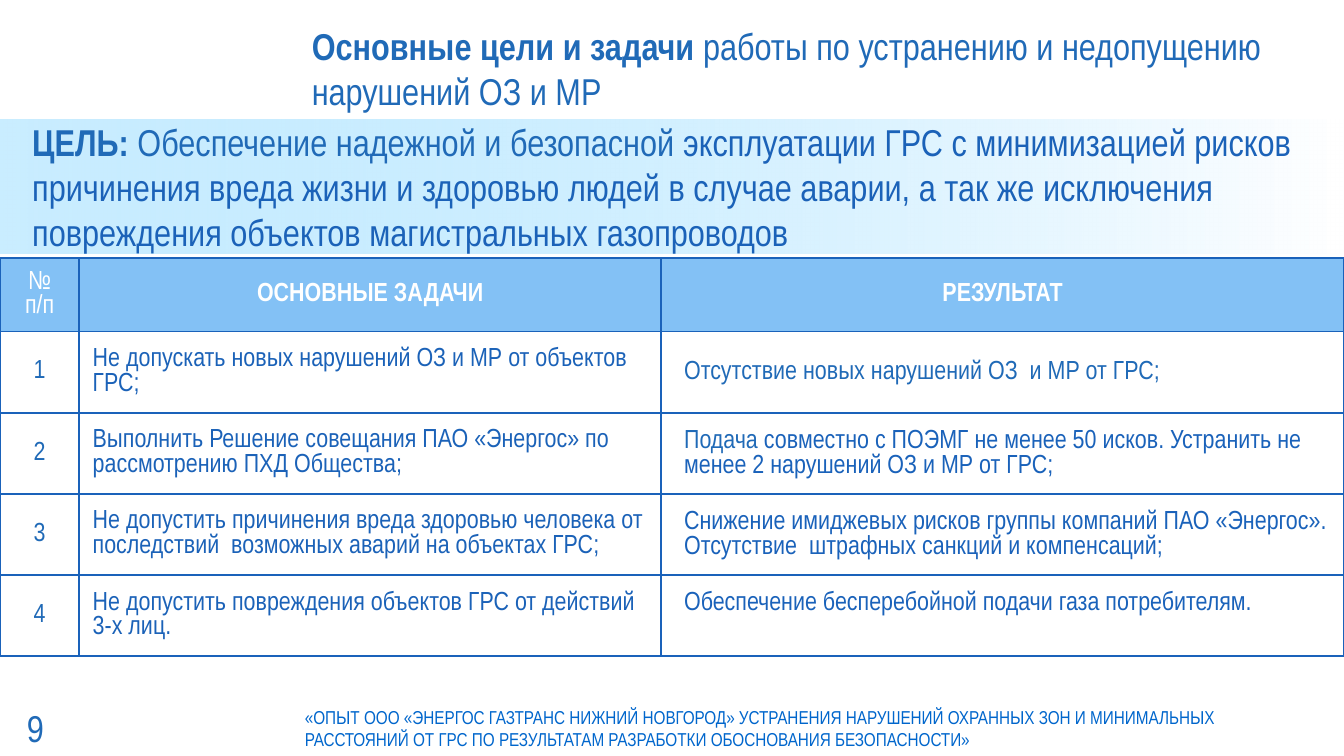
"""Build the slide on goals and tasks for protected-zone violations."""
from dataclasses import dataclass

import pptx
import pptx.util
import pptx.dml.color
import pptx.enum.shapes
import pptx.enum.text
import pptx.oxml
import pptx.oxml.ns
from lxml import etree

W = 10
H = W * 9 / 16
FONT = "Arial Narrow"
COLORS = {
    "main": "206AB7", "text": "1B62B8", "line": "1A62BA", "head": "83C1F5",
    "white": "FFFFFF", "sky": "66CCFF", "footer": "0066CC",
}
COLS = (0.059, 0.433, 0.508)
ROWS = (0.49, 0.604, 0.604, 0.604, 0.604)
WIDE = (0.1, 0.04, 0.1, 0.04)
TIGHT = (0.08, 0.01, 0.08, 0)
RAISED = (0.08, 0.01, 0.08, 0.19)
ALIGN = pptx.enum.text.PP_ALIGN
ANCHOR = pptx.enum.text.MSO_ANCHOR


@dataclass
class Box:
    """Shares of the slide's width and height."""
    x: float
    y: float
    w: float
    h: float

    def emu(self) -> list:
        shares = ((self.x, W), (self.y, H), (self.w, W), (self.h, H))
        return [pptx.util.Inches(a * b) for a, b in shares]


@dataclass
class Run:
    text: str
    color: str = "main"
    bold: bool = False


@dataclass
class Task:
    goal: str
    result: list
    margins: tuple = TIGHT


TASKS = [
    Task("Не допускать новых нарушений ОЗ и МР от объектов ГРС;",
         [Run("Отсутствие новых нарушений ОЗ  и МР от ГРС;")]),
    Task("Выполнить Решение совещания ПАО «Энергос» по рассмотрению ПХД Общества;",
         [Run("Подача"),
          Run(" совместно с ПОЭМГ не менее 50 исков. Устранить не менее 2 нарушений ОЗ и МР от ГРС;", "line")]),
    Task("Не допустить причинения вреда здоровью человека от последствий  возможных аварий на объектах ГРС;",
         [Run("Снижение имиджевых рисков группы компаний ПАО «Энергос». "
              "Отсутствие  штрафных санкций и компенсаций;", "line")]),
    Task("Не допустить повреждения объектов ГРС от действий 3-х лиц.",
         [Run("Обеспечение бесперебойной подачи газа потребителям.", "line")], RAISED),
]


def rgb(name: str) -> pptx.dml.color.RGBColor:
    return pptx.dml.color.RGBColor.from_string(COLORS[name])


def write(tf, runs: list, *, size: float = 20, align=ALIGN.LEFT, indent: float = 0) -> None:
    tf.word_wrap = True
    p = tf.paragraphs[0]
    p.alignment = align
    if indent:
        pPr = p._p.get_or_add_pPr()
        pPr.set("marL", str(pptx.util.Inches(indent)))
        pPr.set("indent", "0")
    for item in runs:
        r = p.add_run()
        r.text = item.text
        r.font.name = FONT
        r.font.size = pptx.util.Pt(size)
        r.font.bold = item.bold
        r.font.color.rgb = rgb(item.color)


def set_margins(frame, margins: tuple) -> None:
    for side, value in zip(("left", "top", "right", "bottom"), margins):
        setattr(frame, f"margin_{side}", pptx.util.Inches(value))


def add_text(s, box: Box, runs: list, *, margins: tuple = (0, 0, 0, 0),
             anchor=ANCHOR.MIDDLE, **fmt) -> None:
    tf = s.shapes.add_textbox(*box.emu()).text_frame
    set_margins(tf, margins)
    tf.vertical_anchor = anchor
    write(tf, runs, **fmt)


def add_goal(s, box: Box, runs: list) -> None:
    sp = s.shapes.add_shape(pptx.enum.shapes.MSO_SHAPE.RECTANGLE, *box.emu())
    sp.shadow.inherit = False
    sp.line.fill.background()
    sp.fill.gradient()
    sp.fill.gradient_angle = 0
    for stop, color, alpha in zip(sp.fill.gradient_stops, ("sky", "white"), (35, 82)):
        stop.color.rgb = rgb(color)
        clr = stop._gs.find(pptx.oxml.ns.qn("a:srgbClr"))
        etree.SubElement(clr, pptx.oxml.ns.qn("a:alpha")).set("val", str(alpha * 1000))
    tf = sp.text_frame
    set_margins(tf, (0, 0, 0, 0))
    tf.vertical_anchor = ANCHOR.MIDDLE
    write(tf, runs, indent=0.24)


def add_cell(cell, runs: list, *, margins: tuple = WIDE, fill: str = "", **fmt) -> None:
    tcPr = cell._tc.get_or_add_tcPr()
    for side in "LRTB":
        tcPr.append(pptx.oxml.parse_xml(
            f'<a:ln{side} {pptx.oxml.ns.nsdecls("a")} w="12700"><a:solidFill>'
            f'<a:srgbClr val="{COLORS["line"]}"/></a:solidFill></a:ln{side}>'))
    if fill:
        cell.fill.solid()
        cell.fill.fore_color.rgb = rgb(fill)
    else:
        cell.fill.background()
    cell.vertical_anchor = ANCHOR.MIDDLE
    set_margins(cell, margins)
    write(cell.text_frame, runs, size=14, **fmt)


def add_tasks(s, box: Box, tasks: list) -> None:
    table = s.shapes.add_table(len(ROWS), len(COLS), *box.emu()).table
    table.first_row = table.horz_banding = False
    for column, share in zip(table.columns, COLS):
        column.width = pptx.util.Inches(share * W)
    for row, height in zip(table.rows, ROWS):
        row.height = pptx.util.Inches(height)
    for i, title in enumerate(("№ п/п", "ОСНОВНЫЕ ЗАДАЧИ", "РЕЗУЛЬТАТ")):
        add_cell(table.cell(0, i), [Run(title, "white", i > 0)], fill="head", align=ALIGN.CENTER)
    for n, task in enumerate(tasks, 1):
        add_cell(table.cell(n, 0), [Run(str(n))], align=ALIGN.CENTER)
        add_cell(table.cell(n, 1), [Run(task.goal, "text")])
        add_cell(table.cell(n, 2), task.result, margins=task.margins, indent=0.09)


def main() -> None:
    prs = pptx.Presentation()
    prs.slide_width, prs.slide_height = pptx.util.Inches(W), pptx.util.Inches(H)
    s = prs.slides.add_slide(prs.slide_layouts[6])
    add_text(s, Box(0.232, 0.27 / H, 0.757, 0.47 / H), [
        Run("Основные цели и задачи ", bold=True),
        Run("работы по устранению и недопущению нарушений ОЗ и МР")])
    add_goal(s, Box(0, 0.89 / H, 1, 1 / H), [
        Run("ЦЕЛЬ: ", bold=True),
        Run("Обеспечение надежной и безопасной "),
        Run("эксплуатации ГРС с минимизацией рисков причинения вреда жизни и здоровью людей "
            "в случае аварии, а так же исключения повреждения объектов магистральных газопроводов", "text")])
    add_tasks(s, Box(0, 1.92 / H, 1, sum(ROWS) / H), TASKS)
    add_text(s, Box(0, 5.2 / H, 0.209, 0.42 / H), [Run("9")], margins=(0.2, 0, 0, 0))
    add_text(s, Box(0.217, 5.2 / H, 0.772, 0.44 / H), [
        Run("«ОПЫТ ООО «ЭНЕРГОС ГАЗТРАНС НИЖНИЙ НОВГОРОД» УСТРАНЕНИЯ НАРУШЕНИЙ ОХРАННЫХ ЗОН И МИНИМАЛЬНЫХ "
            "РАССТОЯНИЙ ОТ ГРС ПО РЕЗУЛЬТАТАМ РАЗРАБОТКИ ОБОСНОВАНИЯ БЕЗОПАСНОСТИ»", "footer")],
        margins=(0.1, 0.05, 0.1, 0.05), anchor=ANCHOR.TOP, size=10)
    prs.save("out.pptx")


if __name__ == "__main__":
    main()
